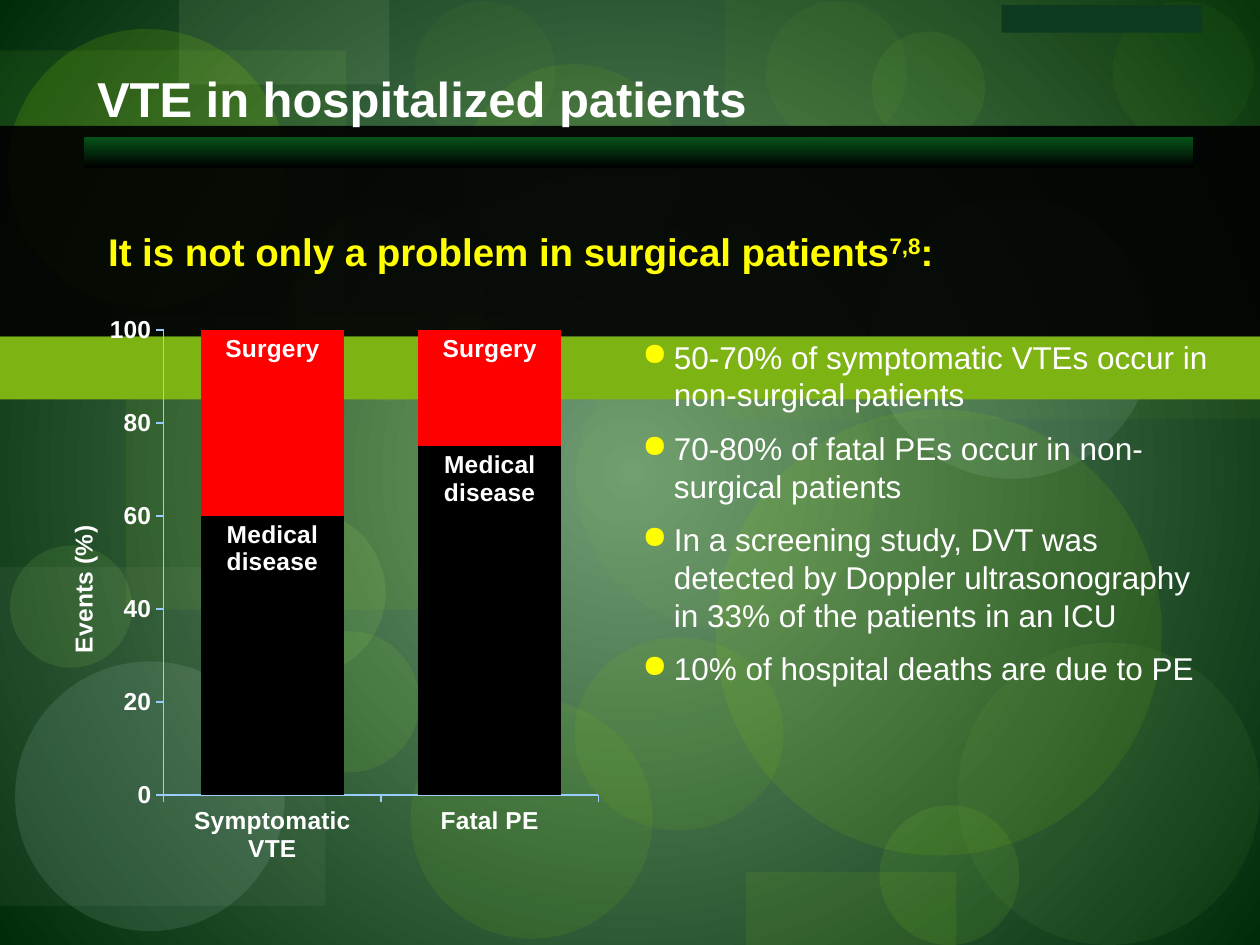
from dataclasses import dataclass

from lxml.etree import SubElement
from pptx import Presentation
from pptx.chart.data import CategoryChartData
from pptx.dml.color import RGBColor
from pptx.enum.chart import XL_CHART_TYPE, XL_LABEL_POSITION, XL_TICK_MARK
from pptx.enum.shapes import MSO_SHAPE
from pptx.enum.text import MSO_ANCHOR, PP_ALIGN
from pptx.oxml import parse_xml
from pptx.oxml.ns import nsdecls, qn
from pptx.util import Inches, Pt


@dataclass(frozen=True)
class Theme:
    """Hold the colours, font and type sizes."""
    face: str = "Arial"
    text: str = "FFFFFF"
    accent: str = "FFFF00"
    axis: str = "99CCFF"
    glow: str = "709D72"
    edge: str = "002C0A"
    patch: str = "0E3B20"
    band: str = "7EB314"
    rule: str = "065218"
    black: str = "000000"
    red: str = "FF0000"
    head: int = 28
    lead: int = 22
    body: int = 18
    label: int = 14


THEME = Theme()
OVAL, RECT = MSO_SHAPE.OVAL, MSO_SHAPE.RECTANGLE
DECOR = [
    (RECT, 1, 2.51, 3, 2.33, "8FCB17", 9),
    (OVAL, 3.26, 5.55, 1.92, 1.9, "75BC1B", 13),
    (RECT, 5.75, 0, 4.25, 3.33, "8FCB17", 6),
    (RECT, 0, 4.5, 2.58, 2.69, "ABB3AC", 8),
    (OVAL, 4.57, 2.61, 2.38, 2.38, "86BE4B", 8),
    (OVAL, 6.98, 6.39, 1.11, 1.11, "A5FF31", 9),
    (OVAL, 6.91, 1.56, 2.24, 2.24, "C1E8E4", 11),
    (OVAL, 0.12, 5.25, 2.14, 2.14, "C1E8E4", 12),
    (OVAL, 2.21, 5.01, 1.12, 1.12, "A5FF31", 9),
    (OVAL, 4.56, 5.06, 1.66, 1.53, "97E200", 8),
    (RECT, 0, 0.4, 2.75, 2.61, "A5FF31", 7),
    (RECT, 1.42, 0, 1.67, 0.67, "C6E2AC", 10),
    (OVAL, 0.06, 0.23, 2.21, 2.21, "97E200", 15),
    (OVAL, 0.08, 4.33, 0.97, 0.97, "B5FF67", 10),
    (OVAL, 2.32, 1.65, 1.53, 1.53, "A5FF31", 9),
    (OVAL, 3.68, 0.51, 1.74, 1.74, "97E200", 8),
    (OVAL, 5.68, 3.25, 3.54, 3.54, "97E200", 10),
    (OVAL, 6.08, 0.01, 1.12, 1.12, "A5FF31", 4),
    (OVAL, 7.6, 5.1, 2.4, 2.4, "86BE4B", 8),
    (OVAL, 1.75, 4.05, 1.31, 1.31, "B5FF67", 10),
    (OVAL, 6.92, 0.25, 0.9, 0.9, "A5FF31", 6),
    (OVAL, 8.83, 0.01, 1.12, 1.12, "A5FF31", 4),
    (RECT, 5.92, 6.92, 1.67, 0.58, "8FCB17", 10),
    (OVAL, 3.29, 0.01, 1.12, 1.12, "A5FF31", 4),
    (RECT, 7.99, 1, 1.59, 0.31, THEME.patch, 100),
    (RECT, 7.95, 0.04, 1.59, 0.22, THEME.patch, 100),
    (RECT, 0, 2.67, 10, 0.5, THEME.band, 100),
    (RECT, 0, 1, 10, 1.67, THEME.black, 90),
]
POINTS = [
    "50-70% of symptomatic VTEs occur in non-surgical patients",
    "70-80% of fatal PEs occur in non-surgical patients",
    "In a screening study, DVT was detected by Doppler ultrasonography "
    "in 33% of the patients in an ICU",
    "10% of hospital deaths are due to PE",
]


def style(font, size, color=THEME.text, bold=True):
    """Set the face, size, colour and weight of a font."""
    font.name, font.size, font.bold = THEME.face, Pt(size), bold
    font.color.rgb = RGBColor.from_string(color)


def blend(fill, start, end):
    """Give a fill two gradient colours."""
    fill.gradient()
    for stop, color in zip(fill.gradient_stops, (start, end)):
        stop.color.rgb = RGBColor.from_string(color)


def add_form(slide, kind, box, color, alpha=100):
    """Add a plain shape with a colour and an opacity in percent."""
    form = slide.shapes.add_shape(kind, *map(Inches, box))
    form.shadow.inherit = False
    form.line.fill.background()
    form.fill.solid()
    form.fill.fore_color.rgb = RGBColor.from_string(color)
    if alpha < 100:
        tint = form._element.spPr.find(".//" + qn("a:srgbClr"))
        SubElement(tint, qn("a:alpha"), val=str(alpha * 1000))
    return form


def add_scene(slide):
    """Draw the round glow and the shapes over it."""
    fill = slide.background.fill
    blend(fill, THEME.glow, THEME.edge)
    grad = slide._element.find(".//" + qn("a:gradFill"))
    grad.replace(grad.find(qn("a:lin")), parse_xml(
        f'<a:path {nsdecls("a")} path="circle">'
        '<a:fillToRect l="50000" t="50000" r="50000" b="50000"/></a:path>'))
    for kind, *box, color, alpha in DECOR:
        add_form(slide, kind, box, color, alpha)


def add_head(slide, x, y, w, h):
    """Place the title with its rule below."""
    title = slide.shapes.title
    title.left, title.top, title.width, title.height = map(Inches, (x, y, w, h))
    frame = title.text_frame
    frame.text = "VTE in hospitalized patients"
    frame.vertical_anchor = MSO_ANCHOR.MIDDLE
    line = frame.paragraphs[0]
    line.alignment = PP_ALIGN.LEFT
    style(line.runs[0].font, THEME.head)
    slide.shapes._spTree.append(title._element)
    rule = add_form(slide, RECT, (x, y + 0.6, w - 0.03, 0.24), THEME.rule)
    blend(rule.fill, THEME.rule, THEME.black)
    rule.fill.gradient_angle = 270


def add_lead(slide, x, y, w, h):
    """Place the lead line with its raised reference."""
    frame = slide.shapes.add_textbox(*map(Inches, (x, y, w, h))).text_frame
    frame.word_wrap = True
    line = frame.paragraphs[0]
    for text in ("It is not only a problem in surgical patients", "7,8", ":"):
        run = line.add_run()
        run.text = text
        style(run.font, THEME.lead, THEME.accent)
    line.runs[1].font._element.set("baseline", "30000")


def add_bars(slide, x, y, w, h):
    """Place the stacked chart of events by patient group."""
    data = CategoryChartData()
    data.categories = ["Symptomatic\nVTE", "Fatal PE"]
    data.add_series("Medical\ndisease", (60, 75))
    data.add_series("Surgery", (40, 25))
    chart = slide.shapes.add_chart(
        XL_CHART_TYPE.COLUMN_STACKED, *map(Inches, (x, y, w, h)), data).chart
    chart.has_legend = chart.has_title = False
    style(chart.font, THEME.label)
    plot = chart.plots[0]
    plot.gap_width, plot.overlap, plot.vary_by_categories = 52, 100, False
    for series, color in zip(plot.series, (THEME.black, THEME.red)):
        series.format.fill.solid()
        series.format.fill.fore_color.rgb = RGBColor.from_string(color)
        labels = series.data_labels
        labels.show_series_name, labels.show_value = True, False
        labels.position = XL_LABEL_POSITION.INSIDE_END
        style(labels.font, THEME.label)
    scale = chart.value_axis
    scale.minimum_scale, scale.maximum_scale, scale.major_unit = 0, 100, 20
    scale.has_major_gridlines = False
    scale.axis_title.text_frame.text = "Events (%)"
    style(scale.axis_title.text_frame.paragraphs[0].runs[0].font, THEME.label)
    for axis in (scale, chart.category_axis):
        axis.major_tick_mark = XL_TICK_MARK.OUTSIDE
        axis.format.line.color.rgb = RGBColor.from_string(THEME.axis)
        axis.format.line.width = Pt(0.75)
    inner = {"x": 0.8 / w, "y": 0.22 / h, "w": 3.45 / w, "h": 3.69 / h}
    area = chart._chartSpace.chart.plotArea
    for old in area.findall(qn("c:layout")):
        area.remove(old)
    parts = "".join(f'<c:{k}Mode val="edge"/>' for k in "xy")
    parts += "".join(f'<c:{k} val="{v:.4f}"/>' for k, v in inner.items())
    area.insert(0, parse_xml(
        f'<c:layout {nsdecls("c")}><c:manualLayout>'
        f'<c:layoutTarget val="inner"/>{parts}</c:manualLayout></c:layout>'))


def add_points(slide, x, y, w, h):
    """Place the bulleted findings."""
    frame = slide.shapes.add_textbox(*map(Inches, (x, y, w, h))).text_frame
    frame.word_wrap = True
    for i, text in enumerate(POINTS):
        line = frame.add_paragraph() if i else frame.paragraphs[0]
        line.text = text
        props = line._p.get_or_add_pPr()
        props.set("marL", str(Inches(0.25)))
        props.set("indent", str(-Inches(0.25)))
        tint = SubElement(props, qn("a:buClr"))
        SubElement(tint, qn("a:srgbClr"), val=THEME.accent)
        SubElement(props, qn("a:buChar"), char="●")
        line.space_before = Pt(9 if i else 0)
        style(line.runs[0].font, THEME.body, bold=False)


def main():
    """Build the slide and save it."""
    deck = Presentation()
    deck.slide_width, deck.slide_height = Inches(10), Inches(7.5)
    slide = deck.slides.add_slide(deck.slide_layouts[5])
    add_scene(slide)
    add_head(slide, 0.67, 0.49, 8.83, 0.58)
    add_bars(slide, 0.5, 2.4, 4.4, 4.6)
    add_points(slide, 5, 2.63, 4.76, 3.6)
    add_lead(slide, 0.76, 1.76, 8.73, 0.43)
    deck.save("out.pptx")


if __name__ == "__main__":
    main()
